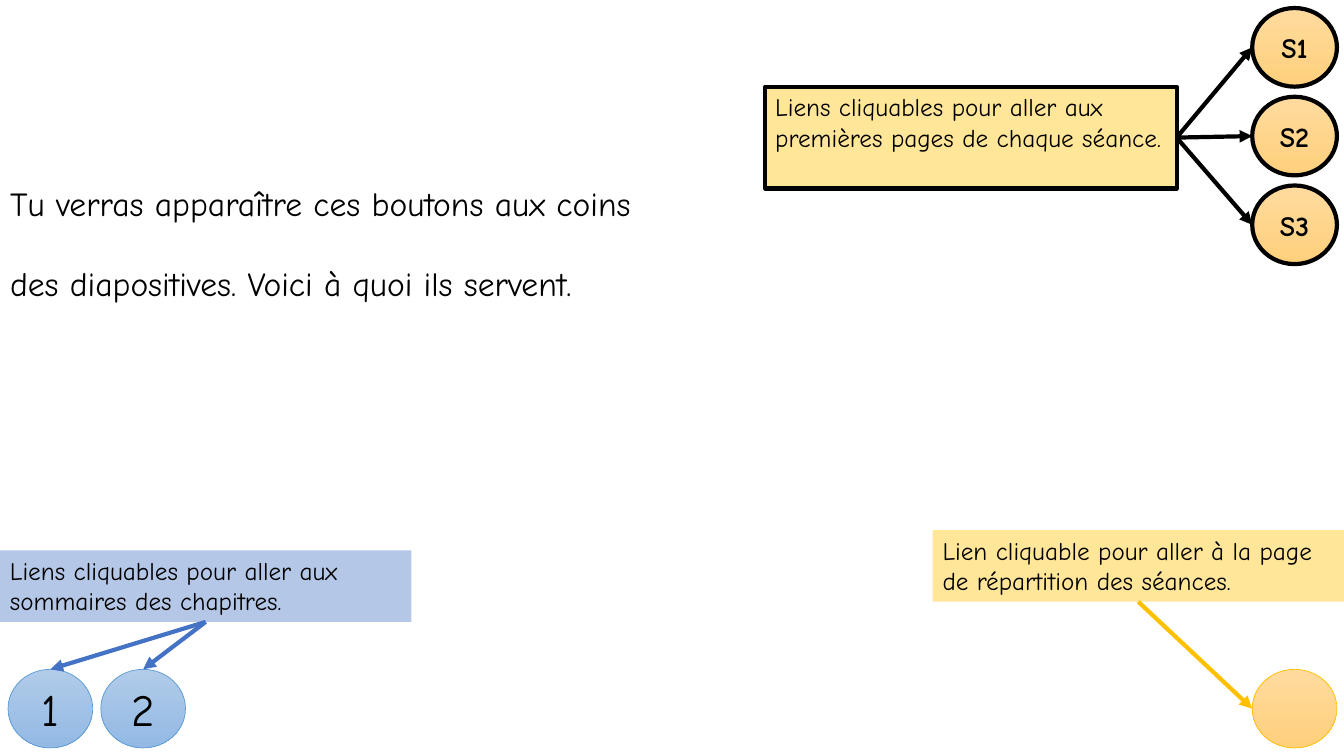
from lxml import etree
from pptx import Presentation
from pptx.dml.color import RGBColor
from pptx.enum.shapes import MSO_CONNECTOR as Link, MSO_SHAPE as Preset
from pptx.enum.text import MSO_ANCHOR as Anchor, MSO_AUTO_SIZE as AutoSize, PP_ALIGN as Align
from pptx.oxml.ns import qn
from pptx.util import Inches, Pt

BLACK = RGBColor(0x00, 0x00, 0x00)
BLUE = RGBColor(0x44, 0x72, 0xC4)
BLUE_EDGE = RGBColor(0x5B, 0x9B, 0xD5)
BLUE_PALE = RGBColor(0xB4, 0xC7, 0xE7)
BLUE_BUTTON = (RGBColor(0xB1, 0xCB, 0xE9), RGBColor(0x93, 0xB9, 0xE4))
GOLD = RGBColor(0xFF, 0xC0, 0x00)
GOLD_PALE = RGBColor(0xFF, 0xE6, 0x99)
GOLD_BUTTON = (RGBColor(0xFF, 0xDB, 0x9E), RGBColor(0xFF, 0xD0, 0x7C))

BUTTON_WIDTH, BUTTON_HEIGHT = 0.84, 0.78
NOTE_WIDTH, NOTE_HEIGHT = 4.08, 0.71
LEFT_EDGE, RIGHT_EDGE, BOTTOM_ROW = 0.08, 12.42, 6.64


class ButtonGuide:
    """Draw the buttons, notes and arrows of the guide in one style."""

    font = "Comic Neue"

    def __init__(self, page):
        self.page = page

    def add_text(self, box, text, size, align=Align.LEFT, anchor=Anchor.TOP, bold=False,
                 spacing=None):
        frame = box.text_frame
        frame.word_wrap = True
        frame.auto_size = AutoSize.NONE
        frame.vertical_anchor = anchor
        para = frame.paragraphs[0]
        para.alignment = align
        para.line_spacing = spacing
        span = para.add_run()
        span.text = text
        span.font.name = self.font
        span.font.size = Pt(size)
        span.font.bold = bold
        span.font.color.rgb = BLACK

    def title(self, text, left, top, width, height):
        box = self.page.shapes.title
        box.left, box.top = Inches(left), Inches(top)
        box.width, box.height = Inches(width), Inches(height)
        self.add_text(box, text, 24, anchor=Anchor.BOTTOM, spacing=2)

    def shape(self, preset, left, top, width, height, edge=None, weight=3):
        box = self.page.shapes.add_shape(
            preset, Inches(left), Inches(top), Inches(width), Inches(height))
        box.shadow.inherit = False
        if edge is None:
            box.line.fill.background()
        else:
            box.line.color.rgb = edge
            box.line.width = Pt(weight)
        return box

    def button(self, left, top, shades, edge, weight=0.5, label=None, size=32, bold=False):
        box = self.shape(Preset.OVAL, left, top, BUTTON_WIDTH, BUTTON_HEIGHT, edge, weight)
        box.fill.gradient()
        box.fill.gradient_angle = 270
        for stop, shade in zip(box.fill.gradient_stops, shades):
            stop.color.rgb = shade
        if label:
            self.add_text(box, label, size, Align.CENTER, Anchor.MIDDLE, bold)
        return box

    def note(self, text, left, top, fill, height=NOTE_HEIGHT, edge=None):
        box = self.shape(Preset.RECTANGLE, left, top, NOTE_WIDTH, height, edge)
        box.fill.solid()
        box.fill.fore_color.rgb = fill
        self.add_text(box, text, 18)
        return box

    def arrow(self, note, note_side, button, color, to_top=False):
        arrow = self.page.shapes.add_connector(
            Link.STRAIGHT, 0, 0, button.left, button.top + button.height // 2)
        arrow.begin_connect(note, note_side)
        if to_top:
            arrow.end_connect(button, 0)
        arrow.line.color.rgb = color
        arrow.line.width = Pt(3)
        properties = arrow._element.spPr
        etree.SubElement(properties.find(qn("a:ln")), qn("a:tailEnd"), type="triangle")
        etree.SubElement(properties, qn("a:effectLst"))


def main():
    deck = Presentation()
    deck.slide_width, deck.slide_height = Inches(13.33), Inches(7.5)
    guide = ButtonGuide(deck.slides.add_slide(deck.slide_layouts[5]))

    guide.title("Tu verras apparaître ces boutons aux coins des diapositives. "
                "Voici à quoi ils servent.", 0, 0.86, 6.51, 2.2)

    chapters = guide.note("Liens cliquables pour aller aux sommaires des chapitres.",
                          0, 5.46, BLUE_PALE)
    for index in range(2):
        button = guide.button(LEFT_EDGE + index * 0.92, BOTTOM_ROW, BLUE_BUTTON, BLUE_EDGE,
                              label=str(index + 1))
        guide.arrow(chapters, 2, button, BLUE, to_top=True)

    sessions = guide.note("Liens cliquables pour aller aux premières pages de chaque séance.",
                          7.59, 0.86, GOLD_PALE, 1.01, BLACK)
    for index in range(3):
        button = guide.button(RIGHT_EDGE, 0.08 + index * 0.88, GOLD_BUTTON, BLACK, 3,
                              f"S{index + 1}", 20, True)
        guide.arrow(sessions, 3, button, BLACK)

    schedule = guide.note("Lien cliquable pour aller à la page de répartition des séances.",
                          9.25, 5.26, GOLD_PALE)
    guide.arrow(schedule, 2, guide.button(RIGHT_EDGE, BOTTOM_ROW, GOLD_BUTTON, GOLD), GOLD)

    deck.save("out.pptx")


if __name__ == "__main__":
    main()
